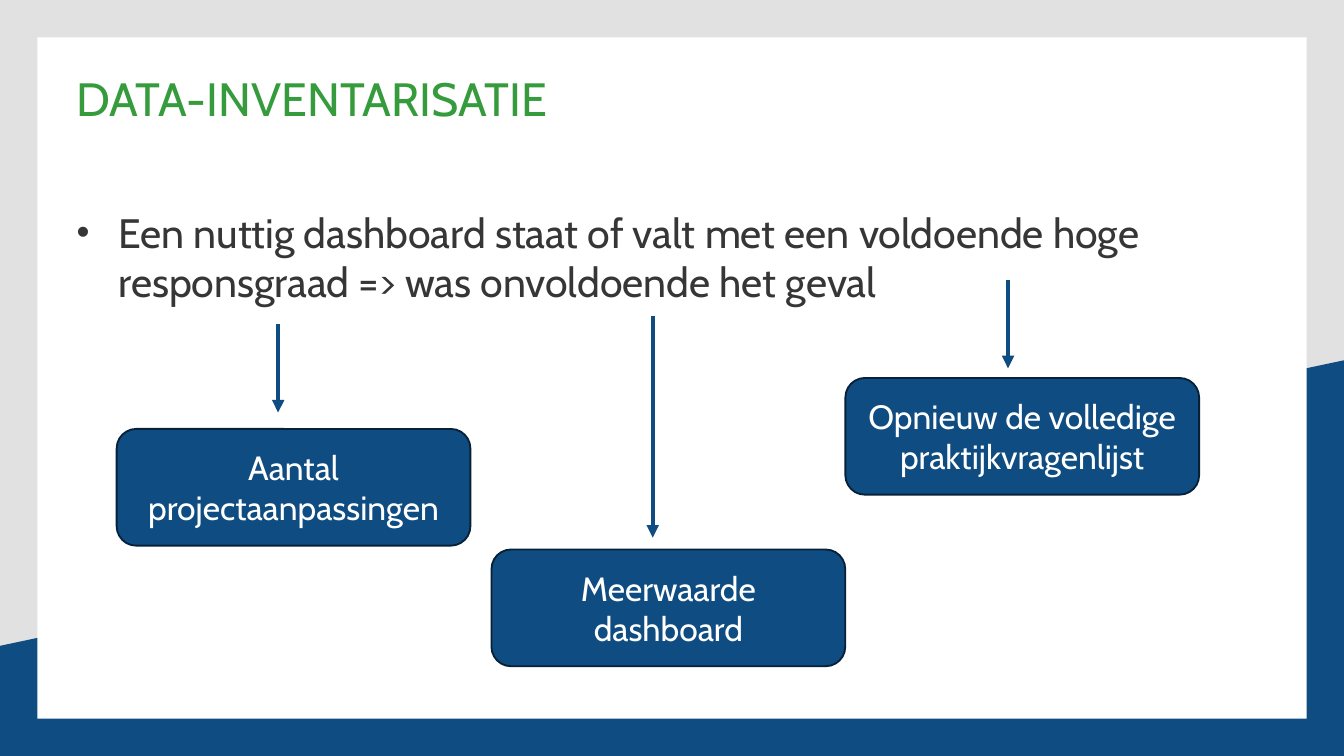
from lxml import etree
from pptx import Presentation
from pptx.dml.color import RGBColor
from pptx.enum import shapes, text
from pptx.oxml import ns
from pptx.util import Pt

BLUE = RGBColor(0x0F, 0x4C, 0x81)
DARK_BLUE = RGBColor(0x07, 0x21, 0x39)
GREEN = RGBColor(0x35, 0x9B, 0x3C)
GREY = RGBColor(0x37, 0x36, 0x36)
PALE_GREY = RGBColor(0xE1, 0xE1, 0xE1)
WHITE = RGBColor(0xFF, 0xFF, 0xFF)


def paint(shape, fill, line=None):
    shape.shadow.inherit = False
    shape.fill.solid()
    shape.fill.fore_color.rgb = fill
    if line is None:
        shape.line.fill.background()
    else:
        shape.line.color.rgb = line
        shape.line.width = Pt(1)


def write(shape, words, size, color, frame_format, para_format):
    """Fill a shape with one formatted paragraph and return that paragraph."""
    frame = shape.text_frame
    frame.text = words
    for name, value in {"word_wrap": True, **frame_format}.items():
        setattr(frame, name, value)
    para = frame.paragraphs[0]
    for name, value in para_format.items():
        setattr(para, name, value)
    span = para.runs[0]
    span.font.name = "Cabin"
    span.font.size = Pt(size)
    span.font.color.rgb = color
    return para


deck = Presentation()
deck.slide_width, deck.slide_height = Pt(720), Pt(405)
page = deck.slides.add_slide(deck.slide_layouts[1])
page.background.fill.solid()
page.background.fill.fore_color.rgb = PALE_GREY

# Backdrop: blue slope and white panel
builder = page.shapes.build_freeform(720, 193, scale=Pt(1))
builder.add_line_segments([(720, 405), (0, 405), (0, 345.6)], close=True)
paint(builder.convert_to_shape(), BLUE)
panel = page.shapes.add_shape(shapes.MSO_SHAPE.RECTANGLE, Pt(20), Pt(20), Pt(680), Pt(365))
paint(panel, WHITE)

# Title and list, lifted above the backdrop
title, body = page.shapes.title, page.placeholders[1]
for holder, top, height in ((title, 41, 62.6), (body, 111, 257.8)):
    holder.left, holder.top = Pt(41), Pt(top)
    holder.width, holder.height = Pt(641), Pt(height)
    page.shapes.element.append(holder.element)

top_frame = {
    "margin_left": 0, "margin_top": 0, "margin_right": 0, "margin_bottom": 0,
    "vertical_anchor": text.MSO_ANCHOR.TOP,
    "auto_size": text.MSO_AUTO_SIZE.NONE,
}
left_para = {"alignment": text.PP_ALIGN.LEFT, "space_before": Pt(0)}
write(title, "DATA-INVENTARISATIE", 25, GREEN, top_frame, {**left_para, "line_spacing": 0.9})
item = write(
    body,
    "Een nuttig dashboard staat of valt met een voldoende hoge "
    "responsgraad => was onvoldoende het geval",
    22, GREY, top_frame, {**left_para, "space_after": Pt(6)},
)
bullet = item._p.get_or_add_pPr()
bullet.set("marL", str(Pt(22.5)))
bullet.set("indent", str(-Pt(22.5)))
etree.SubElement(bullet, ns.qn("a:buSzPct")).set("val", "90000")
etree.SubElement(bullet, ns.qn("a:buFont")).set("typeface", "Arial")
etree.SubElement(bullet, ns.qn("a:buChar")).set("char", "•")

# Rounded boxes
for words, left, top in (
    ("Aantal projectaanpassingen", 62.5, 229.8),
    ("Opnieuw de volledige praktijkvragenlijst", 452.9, 202.5),
    ("Meerwaarde dashboard", 263.3, 294.4),
):
    box = page.shapes.add_shape(
        shapes.MSO_SHAPE.ROUNDED_RECTANGLE, Pt(left), Pt(top), Pt(189.5), Pt(62.5))
    paint(box, BLUE, DARK_BLUE)
    write(box, words, 18, WHITE, {"vertical_anchor": text.MSO_ANCHOR.MIDDLE},
          {"alignment": text.PP_ALIGN.CENTER})

# Arrows down to the boxes
for x, top, bottom in ((149, 173.5, 221), (349.7, 169.2, 288), (540, 150, 197.3)):
    arrow = page.shapes.add_connector(
        shapes.MSO_CONNECTOR.STRAIGHT, Pt(x), Pt(top), Pt(x), Pt(bottom))
    arrow.line.color.rgb = BLUE
    arrow.line.width = Pt(2.25)
    etree.SubElement(arrow.line._get_or_add_ln(), ns.qn("a:tailEnd")).set("type", "triangle")
    etree.SubElement(arrow.element.spPr, ns.qn("a:effectLst"))

deck.save("out.pptx")
